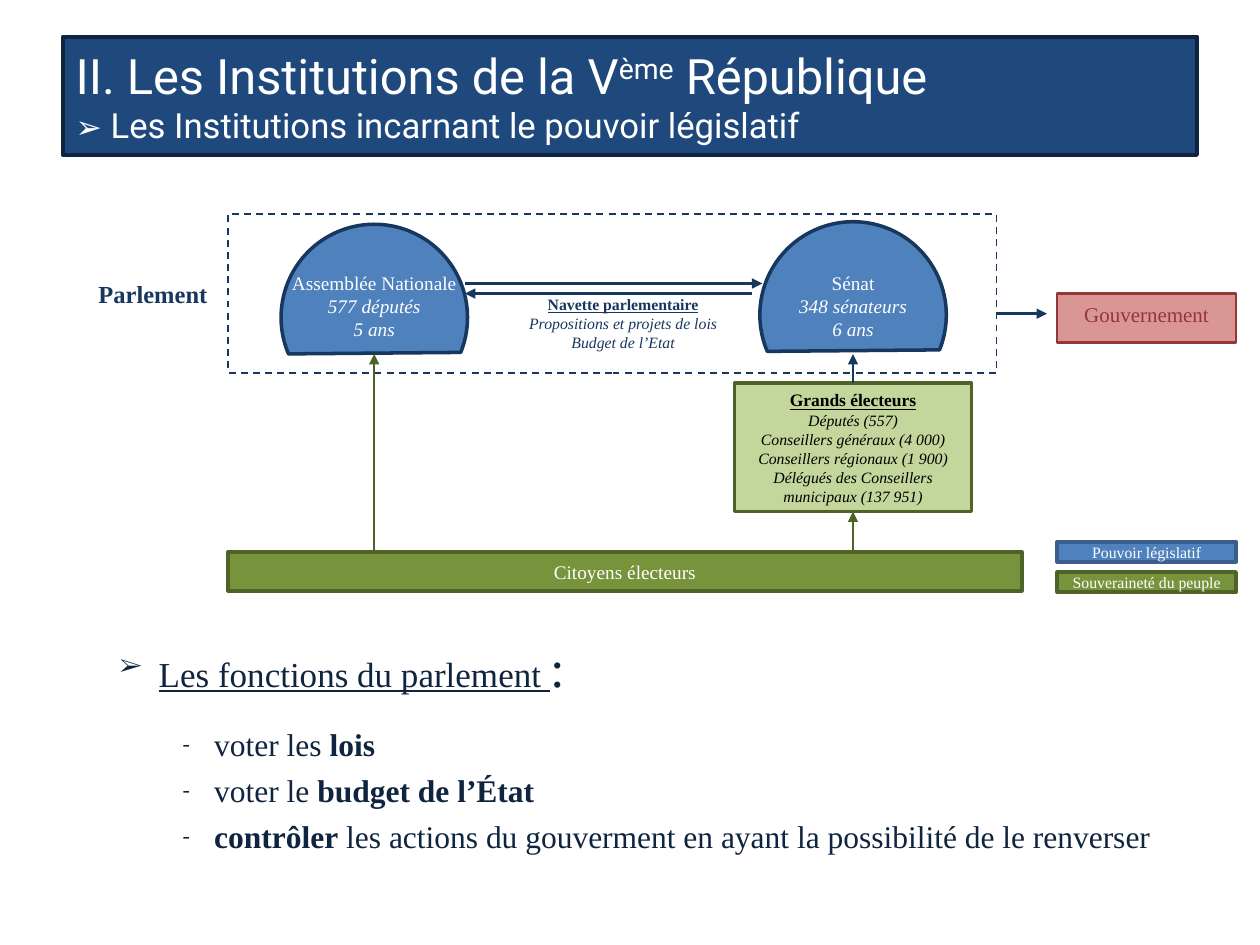
from lxml import etree
from pptx import Presentation
from pptx.dml.color import RGBColor
from pptx.enum.dml import MSO_LINE
from pptx.enum.shapes import MSO_CONNECTOR, MSO_SHAPE
from pptx.enum.text import MSO_ANCHOR, MSO_AUTO_SIZE, PP_ALIGN
from pptx.oxml.ns import qn
from pptx.util import Inches, Pt

RECT, CHORD = MSO_SHAPE.RECTANGLE, MSO_SHAPE.CHORD
STRAIGHT, DASH = MSO_CONNECTOR.STRAIGHT, MSO_LINE.DASH
TOP, MIDDLE = MSO_ANCHOR.TOP, MSO_ANCHOR.MIDDLE
LEFT, CENTER = PP_ALIGN.LEFT, PP_ALIGN.CENTER

SERIF, SANS = "Times New Roman", "Roboto"
NAVY, INK, BLUE = "17375E", "0F243E", "4F81BD"
GREEN, DARK_GREEN, WHITE = "77933C", "4F6228", "FFFFFF"
RED = "953735"

# The slide is a grid of 100 columns by 75 rows
CELL = Inches(0.1)
ASSEMBLY_X, SENATE_X = 29.7, 67.7      # centre columns of the two chambers
FRAME_X, FRAME_Y, FRAME_W = 18.1, 17, 61
KEY_X, KEY_W = 83.9, 14.2
CITIZENS_Y = 43.8


def grid(*cells):
    return [round(c * CELL) for c in cells]


def rgb(hex_code):
    return RGBColor.from_string(hex_code)


def set_line(line, color, width):
    line.color.rgb = rgb(color)
    line.width = Pt(width)


def add_run(p, text, size=11, color=WHITE, font=SERIF, bold=False,
            italic=False, underline=False, raised=0):
    r = p.add_run()
    r.text = text
    f = r.font
    f.name, f.size, f.color.rgb = font, Pt(size), rgb(color)
    f.bold, f.italic, f.underline = bold, italic, underline
    if raised:
        r._r.get_or_add_rPr().set("baseline", str(raised * 1000))


def add_lines(shape, lines, anchor=MIDDLE, **common):
    """Write one centred paragraph for each (text, format) pair."""
    tf = shape.text_frame
    tf.word_wrap, tf.vertical_anchor = True, anchor
    for i, (text, fmt) in enumerate(lines):
        p = tf.add_paragraph() if i else tf.paragraphs[0]
        p.alignment = CENTER
        add_run(p, text, **{**common, **fmt})


def add_box(s, box, fill, line, width=2, kind=RECT):
    sp = s.shapes.add_shape(kind, *grid(*box))
    sp.shadow.inherit = False
    if fill:
        sp.fill.solid()
        sp.fill.fore_color.rgb = rgb(fill)
    else:
        sp.fill.background()
    set_line(sp.line, line, width)
    return sp


def add_label(s, box, lines, **fmt):
    add_lines(s.shapes.add_textbox(*grid(*box)), lines, **fmt)


def add_arrow(s, x1, y1, x2, y2, color=NAVY):
    arrow = s.shapes.add_connector(STRAIGHT, *grid(x1, y1, x2, y2))
    set_line(arrow.line, color, 1.5)
    etree.SubElement(arrow.line._get_or_add_ln(), qn("a:tailEnd"),
                     type="triangle")
    etree.SubElement(arrow._element.spPr, qn("a:effectLst"))
    return arrow


def add_chamber(s, x, y, name, members, term):
    size, label_w = 14.8, 18.1
    dome = add_box(s, (x - size / 2, y, size, size), BLUE, NAVY, kind=CHORD)
    dome.rotation = 112
    add_label(s, (x - label_w / 2, 21, label_w, 8.1),
              [(name, {}), (members, {"italic": True}),
               (term, {"italic": True})], anchor=TOP)


def set_bullet(p, char, margin, indent):
    pPr = p._p.get_or_add_pPr()
    pPr.set("marL", str(Inches(margin)))
    pPr.set("indent", str(Inches(indent)))
    color = etree.SubElement(pPr, qn("a:buClr"))
    etree.SubElement(color, qn("a:srgbClr"), val=INK)
    etree.SubElement(pPr, qn("a:buSzPct"), val="70000")
    etree.SubElement(pPr, qn("a:buFont"), typeface=SERIF)
    etree.SubElement(pPr, qn("a:buChar"), char=char)


def place(sp, box):
    sp.left, sp.top, sp.width, sp.height = grid(*box)
    sp.text_frame.auto_size = MSO_AUTO_SIZE.NONE
    sp.text_frame.word_wrap = True


def fill_title(title):
    place(title, (5, 2.9, 90, 9.4))
    title.fill.solid()
    title.fill.fore_color.rgb = rgb("1F497D")
    set_line(title.line, INK, 2.25)
    title.text_frame.vertical_anchor = MIDDLE
    p = title.text_frame.paragraphs[0]
    p.alignment = LEFT
    add_run(p, "II. Les Institutions de la V", size=27.9, font=SANS)
    add_run(p, "ème", size=27.9, font=SANS, raised=30)
    add_run(p, " République", size=27.9, font=SANS)
    p.add_line_break()
    add_run(p, "➢", size=18, font=SANS)
    add_run(p, " Les Institutions incarnant le pouvoir législatif",
            size=19.8, font=SANS)


def fill_body(body):
    place(body, (3.5, 49.9, 93, 22.2))
    tf = body.text_frame
    tf.vertical_anchor = TOP
    p = tf.paragraphs[0]
    p.level, p.space_before = 1, Pt(0)
    set_bullet(p, "➢", 0.81, -0.31)
    add_run(p, "Les fonctions du parlement ", size=20, color=INK,
            underline=True)
    add_run(p, ":", size=30, color=INK)

    # Each function is a list of (text, bold) runs
    functions = [[("voter les ", False), ("lois", True)],
                 [("voter le ", False), ("budget de l’État", True)],
                 [("contrôler", True),
                  (" les actions du gouverment en ayant la possibilité "
                   "de le renverser", False)]]
    for i, runs in enumerate(functions):
        p = tf.add_paragraph()
        p.level, p.space_before = 2, Pt(4.7 if i else 15.5)
        set_bullet(p, "-", 1.25, -0.25)
        for text, bold in runs:
            add_run(p, text, size=18, color=INK, bold=bold)


def draw_parliament(s):
    frame = add_box(s, (FRAME_X, FRAME_Y, FRAME_W, 12.6), None, NAVY, 1)
    frame.line.dash_style = DASH
    add_label(s, (3.5, 21, 17.3, 4.7), [("Parlement", {})],
              size=14, color=NAVY, bold=True)
    add_chamber(s, ASSEMBLY_X, 17.8, "Assemblée Nationale", "577 députés",
                "5 ans")
    add_chamber(s, SENATE_X, 17.6, "Sénat", "348 sénateurs", "6 ans")

    # Exchange between the chambers
    add_arrow(s, 36.9, 22.5, 60.5, 22.5)
    add_arrow(s, 59.7, 23.3, 36.9, 23.3)
    add_label(s, (40.8, 23.3, 17.3, 4.7),
              [("Navette parlementaire", {"bold": True, "underline": True}),
               ("Propositions et projets de lois", {"italic": True}),
               ("Budget de l’Etat", {"italic": True})], size=9, color=NAVY)

    # Government
    add_arrow(s, FRAME_X + FRAME_W, 24.9, 83.1, 24.9)
    government = add_box(s, (KEY_X, 23.3, KEY_W, 3.9), "D99694", RED, 1.5)
    government.text_frame.margin_bottom = Inches(0.11)
    add_lines(government, [("Gouvernement", {})], size=12, color=RED)


def draw_voters(s):
    citizens = add_box(s, (FRAME_X, CITIZENS_Y, 63, 3.1), GREEN, DARK_GREEN)
    add_lines(citizens, [("Citoyens électeurs", {})])

    width = 18.8
    electors = add_box(s, (SENATE_X - width / 2, 30.4, width, 10.2),
                       "C3D69B", DARK_GREEN)
    groups = ["Députés (557)", "Conseillers généraux (4 000)",
              "Conseillers régionaux (1 900)",
              "Délégués des Conseillers municipaux (137 951)"]
    heading = {"size": 10, "bold": True, "underline": True}
    add_lines(electors, [("Grands électeurs", heading)]
              + [(group, {"italic": True}) for group in groups],
              size=9, color="000000")

    # Votes going up to the chambers
    add_arrow(s, ASSEMBLY_X, CITIZENS_Y, ASSEMBLY_X, 28.1, DARK_GREEN)
    vote = add_arrow(s, SENATE_X, CITIZENS_Y, SENATE_X, 40.6, DARK_GREEN)
    vote.end_connect(electors, 2)
    election = add_arrow(s, SENATE_X, 30.4, SENATE_X, 28.1)
    election.begin_connect(electors, 0)


def draw_key(s):
    entries = [("Pouvoir législatif", BLUE, "3A5F8C"),
               ("Souveraineté du peuple", GREEN, DARK_GREEN)]
    for i, (text, fill, line) in enumerate(entries):
        sp = add_box(s, (KEY_X, 43 + 2.4 * i, KEY_W, 1.6), fill, line)
        add_lines(sp, [(text, {})], size=9)


def main():
    prs = Presentation()
    prs.slide_width, prs.slide_height = grid(100, 75)
    s = prs.slides.add_slide(prs.slide_layouts[1])
    fill_title(s.shapes.title)
    fill_body(s.placeholders[1])
    draw_parliament(s)
    draw_voters(s)
    draw_key(s)
    prs.save("out.pptx")


if __name__ == "__main__":
    main()
